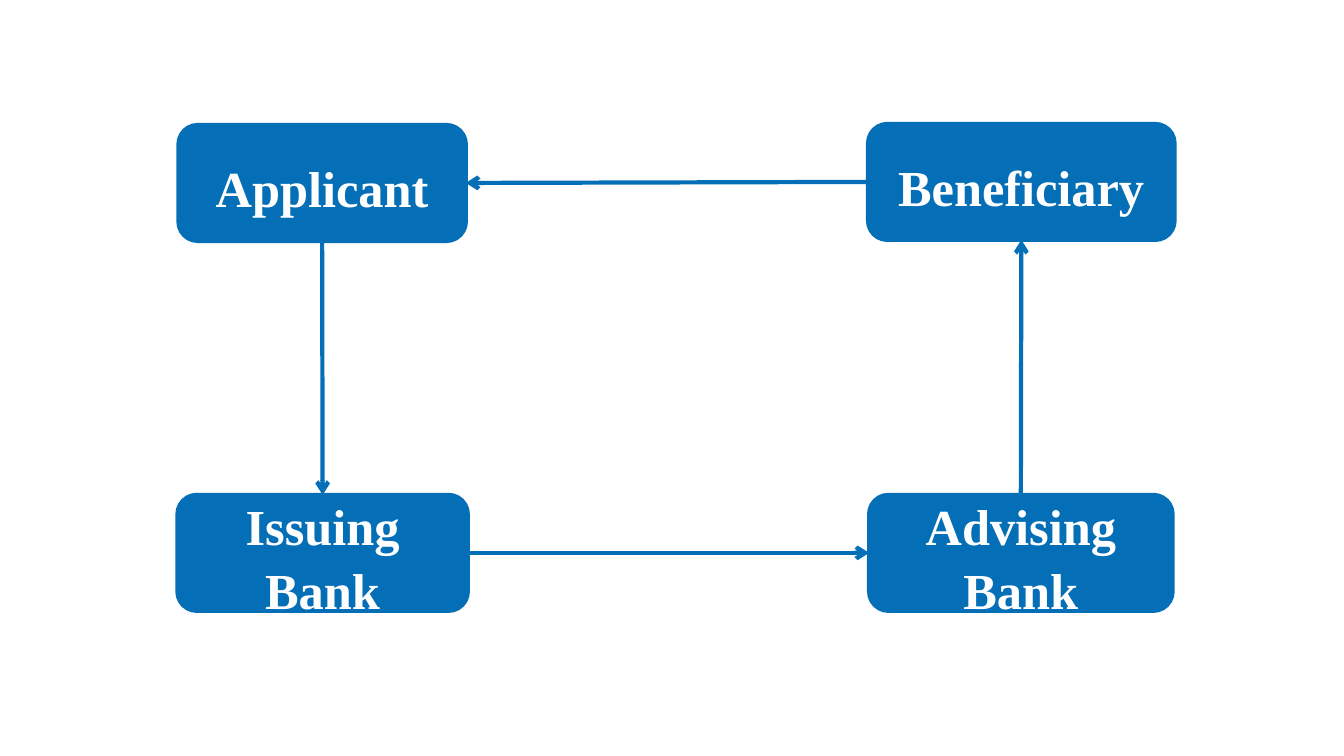
from lxml.etree import SubElement
from pptx import Presentation
from pptx.dml.color import RGBColor
from pptx.enum.shapes import MSO_CONNECTOR, MSO_SHAPE
from pptx.enum.text import MSO_ANCHOR, PP_ALIGN
from pptx.oxml.ns import qn
from pptx.util import Inches, Pt

BLUE = RGBColor(0x04, 0x6F, 0xB6)
WHITE = RGBColor(0xFF, 0xFF, 0xFF)
FONT = "Times New Roman"
LINE_WIDTH = Pt(3)
PARTY_HEIGHT = 1.15
TOP, LEFT, BOTTOM, RIGHT = range(4)

PARTIES = {
    "Applicant": (1.77, 1.24, 2.85),
    "Beneficiary": (8.61, 1.23, 3.04),
    "Issuing Bank": (1.76, 4.91, 2.88),
    "Advising Bank": (8.62, 4.91, 3.01),
}
FLOWS = [
    ("Applicant", BOTTOM, "Issuing Bank", TOP),
    ("Issuing Bank", RIGHT, "Advising Bank", LEFT),
    ("Advising Bank", TOP, "Beneficiary", BOTTOM),
    ("Beneficiary", LEFT, "Applicant", RIGHT),
]


def add_party(slide, name, left, top, width):
    shape = slide.shapes.add_shape(
        MSO_SHAPE.FLOWCHART_ALTERNATE_PROCESS,
        Inches(left), Inches(top), Inches(width), Inches(PARTY_HEIGHT),
    )
    shape.shadow.inherit = False
    shape.fill.solid()
    shape.fill.fore_color.rgb = BLUE
    shape.line.color.rgb = BLUE
    shape.line.width = LINE_WIDTH
    text_frame = shape.text_frame
    text_frame.text = name
    text_frame.word_wrap = True
    text_frame.vertical_anchor = MSO_ANCHOR.MIDDLE
    text_frame.margin_top = Inches(0.1)
    paragraph = text_frame.paragraphs[0]
    paragraph.alignment = PP_ALIGN.CENTER
    paragraph.line_spacing = 1.06
    font = paragraph.runs[0].font
    font.name = FONT
    font.size = Pt(36)
    font.bold = True
    font.color.rgb = WHITE
    return shape


def add_flow(slide, source, source_side, target, target_side):
    connector = slide.shapes.add_connector(MSO_CONNECTOR.STRAIGHT, 0, 0, 0, 0)
    connector.begin_connect(source, source_side)
    connector.end_connect(target, target_side)
    connector.line.color.rgb = BLUE
    connector.line.width = LINE_WIDTH
    properties = connector._element.spPr
    SubElement(properties.find(qn("a:ln")), qn("a:tailEnd"), type="arrow")
    SubElement(properties, qn("a:effectLst"))


def main():
    presentation = Presentation()
    presentation.slide_width = Inches(13.33)
    presentation.slide_height = Inches(7.5)
    slide = presentation.slides.add_slide(presentation.slide_layouts[6])
    shapes = {name: add_party(slide, name, *place) for name, place in PARTIES.items()}
    for source, source_side, target, target_side in FLOWS:
        add_flow(slide, shapes[source], source_side, shapes[target], target_side)
    presentation.save("out.pptx")


if __name__ == "__main__":
    main()
